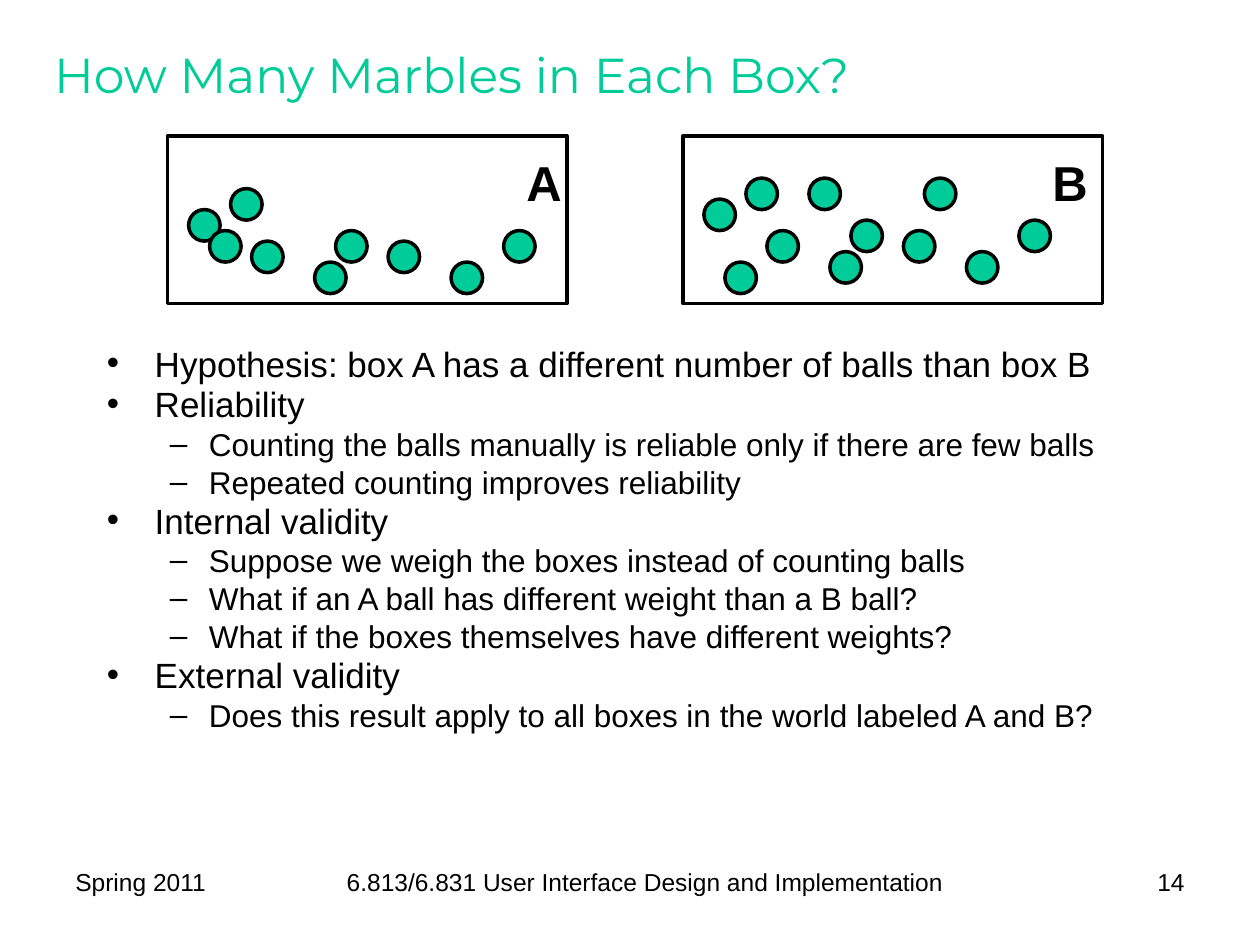
from dataclasses import dataclass

from lxml import etree
from pptx import Presentation
from pptx.dml.color import RGBColor
from pptx.enum import shapes, text
from pptx.oxml import ns
from pptx.util import Inches, Pt


@dataclass(frozen=True)
class Theme:
    """Hold the colours, fonts and type sizes of the slide."""
    green: RGBColor = RGBColor(0x00, 0xCC, 0x99)
    black: RGBColor = RGBColor(0x00, 0x00, 0x00)
    white: RGBColor = RGBColor(0xFF, 0xFF, 0xFF)
    heading: str = "Montserrat"
    body: str = "Arial"
    large: Pt = Pt(28)
    small: Pt = Pt(14)
    outline: Pt = Pt(2)


THEME = Theme()
UNIT = 1 / 12
MARBLE = 3 * UNIT
LEVELS = [
    {"size": Pt(20), "before": Pt(4), "margin": 0.38, "hang": 0.38, "bullet": "•"},
    {"size": Pt(18), "before": Pt(4.4), "margin": 0.81, "hang": 0.31, "bullet": "–"},
]
POINTS = [
    (0, "Hypothesis: box A has a different number of balls than box B"),
    (0, "Reliability"),
    (1, "Counting the balls manually is reliable only if there are few balls"),
    (1, "Repeated counting improves reliability"),
    (0, "Internal validity"),
    (1, "Suppose we weigh the boxes instead of counting balls"),
    (1, "What if an A ball has different weight than a B ball?"),
    (1, "What if the boxes themselves have different weights?"),
    (0, "External validity"),
    (1, "Does this result apply to all boxes in the world labeled A and B?"),
]
MARBLES_A = [(2, 7), (4, 9), (6, 5), (8, 10), (14, 12), (16, 9), (21, 10),
             (27, 12), (32, 9)]
MARBLES_B = [(2, 6), (4, 12), (6, 4), (8, 9), (14, 11), (16, 8), (21, 9),
             (27, 11), (32, 8), (12, 4), (23, 4)]
FOOTER = [
    (0.5, 1.5, "Spring 2011", text.PP_ALIGN.LEFT),
    (2.08, 6.08, "6.813/6.831 User Interface Design and Implementation",
     text.PP_ALIGN.CENTER),
    (8.25, 1.25, "14", text.PP_ALIGN.RIGHT),
]


def apply_format(target, values):
    """Set each attribute of the target from a dict."""
    for name, value in values.items():
        setattr(target, name, value)


def write(para, words, size, font=THEME.body, color=THEME.black, bold=False):
    """Add one formatted run to a paragraph."""
    span = para.add_run()
    span.text = words
    apply_format(span.font, {"size": size, "name": font, "bold": bold})
    span.font.color.rgb = color


def add_text_box(page, box, wrap=True):
    """Add an empty text box and return its text frame."""
    frame = page.shapes.add_textbox(*map(Inches, box)).text_frame
    frame.word_wrap = wrap
    return frame


def add_outlined(page, kind, box, fill):
    """Add a filled shape with a black outline."""
    shape = page.shapes.add_shape(kind, *map(Inches, box))
    shape.shadow.inherit = False
    shape.fill.solid()
    shape.fill.fore_color.rgb = fill
    shape.line.color.rgb = THEME.black
    shape.line.width = THEME.outline


def place_title(page, box, words):
    """Move and format the title placeholder."""
    title = page.shapes.title
    names = ("left", "top", "width", "height")
    apply_format(title, dict(zip(names, map(Inches, box))))
    apply_format(title.text_frame, {
        "vertical_anchor": text.MSO_ANCHOR.MIDDLE, "word_wrap": True})
    para = title.text_frame.paragraphs[0]
    para.alignment = text.PP_ALIGN.LEFT
    write(para, words, THEME.large, THEME.heading, THEME.green)


def place_marble_box(page, box, marbles, label, label_column):
    """Draw a box with its marbles and label on a grid of twelfths of an inch."""
    left, top = box[:2]
    add_outlined(page, shapes.MSO_SHAPE.RECTANGLE, box, THEME.white)
    for column, row in marbles:
        spot = (left + column * UNIT, top + row * UNIT, MARBLE, MARBLE)
        add_outlined(page, shapes.MSO_SHAPE.OVAL, spot, THEME.green)
    spot = (left + label_column * UNIT, top + UNIT, 0.48, 0.57)
    frame = add_text_box(page, spot, wrap=False)
    write(frame.paragraphs[0], label, THEME.large, bold=True)


def add_bullet(para, level):
    """Give a paragraph a hanging bullet."""
    props = para._p.get_or_add_pPr()
    props.set("marL", str(Inches(level["margin"])))
    props.set("indent", str(-Inches(level["hang"])))
    etree.SubElement(props, ns.qn("a:buFont"), typeface=THEME.body)
    etree.SubElement(props, ns.qn("a:buChar"), char=level["bullet"])


def place_points(page, box, points):
    """Write the two-level bullet list."""
    frame = add_text_box(page, box)
    for index, (depth, words) in enumerate(points):
        para = frame.add_paragraph() if index else frame.paragraphs[0]
        level = LEVELS[depth]
        apply_format(para, {
            "level": depth, "line_spacing": 0.8, "space_before": level["before"]})
        add_bullet(para, level)
        write(para, words, level["size"])


def place_footer(page, top, height, parts):
    """Write the date, course name and page number along one row."""
    for left, width, words, alignment in parts:
        para = add_text_box(page, (left, top, width, height)).paragraphs[0]
        para.alignment = alignment
        write(para, words, THEME.small)


def main():
    """Build the deck and save it."""
    deck = Presentation()
    apply_format(deck, {"slide_width": Inches(10), "slide_height": Inches(7.5)})
    page = deck.slides.add_slide(deck.slide_layouts[5])
    place_title(page, (0.33, 0.17, 9.25, 0.83), "How Many Marbles in Each Box?")
    place_points(page, (0.75, 2.73, 8.5, 3.93), POINTS)
    place_footer(page, 6.83, 0.52, FOOTER)
    place_marble_box(page, (1.33, 1.08, 3.17, 1.33), MARBLES_A, "A", 33)
    place_marble_box(page, (5.42, 1.08, 3.33, 1.33), MARBLES_B, "B", 34)
    deck.save("out.pptx")


if __name__ == "__main__":
    main()
